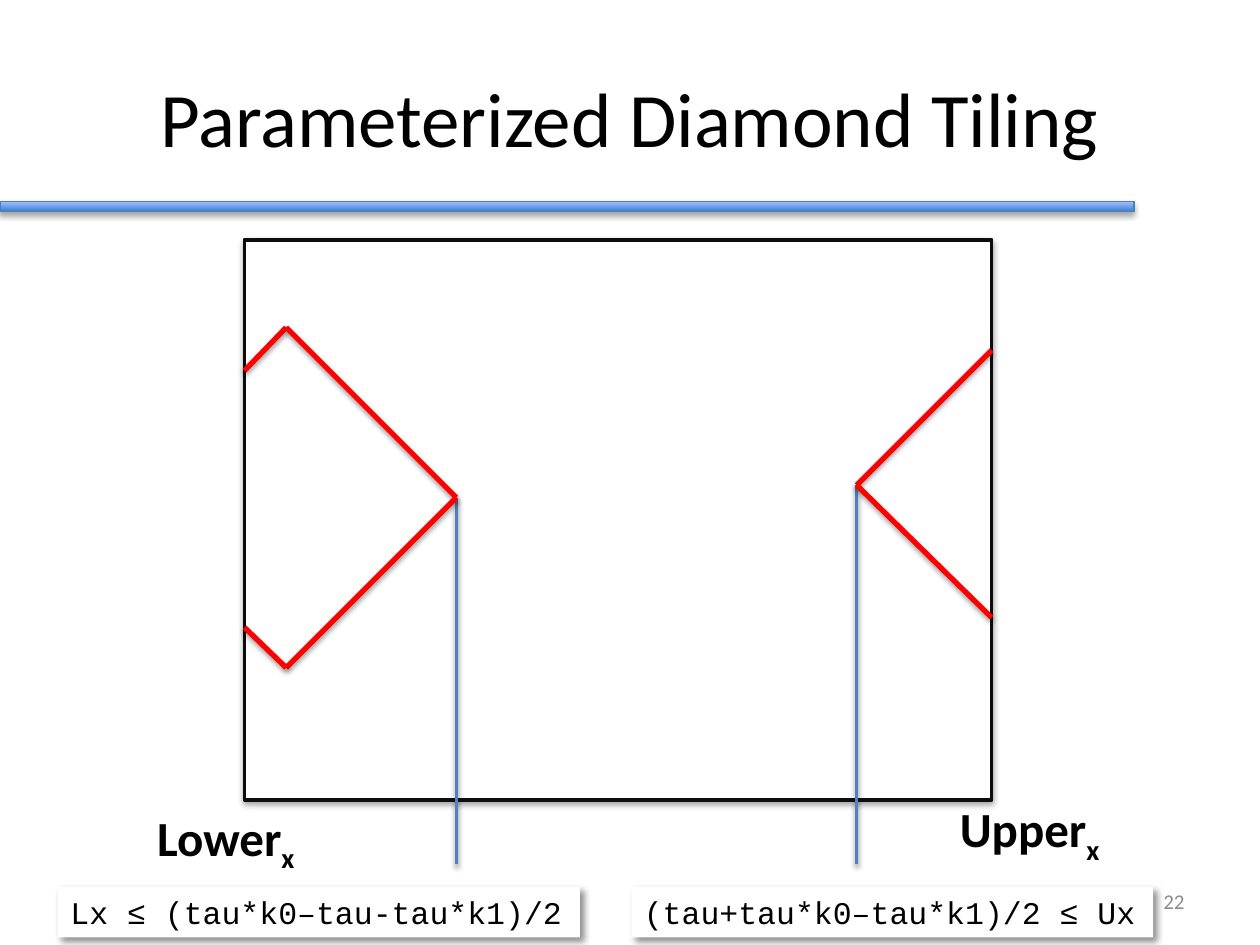
"""Build the Parameterized Diamond Tiling slide."""
from itertools import pairwise
from typing import NamedTuple

from lxml.etree import SubElement
from pptx import Presentation
from pptx.dml.color import RGBColor
from pptx.enum.shapes import MSO_CONNECTOR, MSO_SHAPE
from pptx.enum.text import MSO_ANCHOR, PP_ALIGN
from pptx.oxml.ns import qn
from pptx.util import Cm, Pt

BLACK = RGBColor(0x00, 0x00, 0x00)
WHITE = RGBColor(0xFF, 0xFF, 0xFF)
INK = RGBColor(0x0D, 0x0D, 0x0D)
GREY = RGBColor(0x8C, 0x8C, 0x8C)
RED = RGBColor(0xFF, 0x00, 0x00)
BLUE = RGBColor(0x4F, 0x81, 0xBD)
BAR_EDGE = RGBColor(0x4B, 0x7E, 0xBC)
BAR_DARK = RGBColor(0x3F, 0x80, 0xCE)
BAR_LIGHT = RGBColor(0xA4, 0xC4, 0xFF)


class Box(NamedTuple):
    left: float
    top: float
    width: float
    height: float


class Shadow(NamedTuple):
    opacity: int
    blur: float
    distance: float
    angle: int


class Path(NamedTuple):
    points: list[tuple[float, float]]
    color: RGBColor
    weight: float


class Label(NamedTuple):
    box: Box
    text: str
    size: int
    subscript: str = ""
    bold: bool = False
    font: str = "Calibri"
    color: RGBColor = BLACK
    align: PP_ALIGN = PP_ALIGN.LEFT
    anchor: MSO_ANCHOR = MSO_ANCHOR.TOP
    wrap: bool = False


BOX_SHADOW = Shadow(35, 3.1, 1.8, 90)
LINE_SHADOW = Shadow(38, 3.1, 1.6, 90)
FORMULA_SHADOW = Shadow(43, 4, 3, 45)

BAR = Box(0, 4.06, 22.86, 0.2)
FRAME = Box(4.93, 4.83, 15.06, 11.3)
FRAME_RIGHT = FRAME.left + FRAME.width
GUIDE_END = 17.42
LEFT_TIP = (9.2, 10.03)
RIGHT_TIP = (17.27, 9.78)

PATHS = [
    Path([LEFT_TIP, (LEFT_TIP[0], GUIDE_END)], BLUE, 2),
    Path([RIGHT_TIP, (RIGHT_TIP[0], GUIDE_END)], BLUE, 2),
    Path([(FRAME_RIGHT, 7.06), RIGHT_TIP, (FRAME_RIGHT, 12.45)], RED, 3),
    Path([(FRAME.left, 7.47), (5.77, 6.6), LEFT_TIP, (5.77, 13.46),
          (FRAME.left, 12.65)], RED, 3),
]
LABELS = [
    Label(Box(19.1, 15.98, 3.4, 1.45), "Upper", 28, "x", True),
    Label(Box(2.92, 16.15, 3.4, 1.45), "Lower", 28, "x", True),
    Label(Box(1.27, 0.76, 22.86, 3.18), "Parameterized Diamond Tiling", 44,
          align=PP_ALIGN.CENTER, anchor=MSO_ANCHOR.MIDDLE, wrap=True),
    Label(Box(18.21, 17.65, 5.92, 1.02), "22", 12, color=GREY,
          align=PP_ALIGN.RIGHT, anchor=MSO_ANCHOR.MIDDLE, wrap=True),
]
FORMULAS = [
    Label(Box(left, 17.88, 10.52, 1.02), text, 18, font="Courier New")
    for left, text in ((1.17, "Lx ≤ (tau*k0–tau-tau*k1)/2"),
                       (12.73, "(tau+tau*k0–tau*k1)/2 ≤ Ux"))
]


def add_shadow(sp, shadow: Shadow) -> None:
    """Give a shape or connector an outer shadow."""
    properties = sp._element.spPr
    effects = properties.find(qn("a:effectLst"))
    if effects is None:
        effects = SubElement(properties, qn("a:effectLst"))
    outer = SubElement(effects, qn("a:outerShdw"), blurRad=str(Pt(shadow.blur)),
                       dist=str(Pt(shadow.distance)),
                       dir=str(shadow.angle * 60000), rotWithShape="0")
    color = SubElement(outer, qn("a:srgbClr"), val=str(BLACK))
    SubElement(color, qn("a:alpha"), val=str(shadow.opacity * 1000))


def add_rectangle(s, box: Box, shadow: Shadow, edge: RGBColor | None = None,
                  weight: float = 0):
    """Draw a white rectangle with a shadow and an optional outline."""
    sp = s.shapes.add_shape(MSO_SHAPE.RECTANGLE, *map(Cm, box))
    sp.shadow.inherit = False
    sp.fill.solid()
    sp.fill.fore_color.rgb = WHITE
    if edge is None:
        sp.line.fill.background()
    else:
        sp.line.color.rgb = edge
        sp.line.width = Pt(weight)
    add_shadow(sp, shadow)
    return sp


def add_path(s, path: Path) -> None:
    """Join consecutive points with straight connectors."""
    for start, end in pairwise(path.points):
        sp = s.shapes.add_connector(MSO_CONNECTOR.STRAIGHT, *map(Cm, start + end))
        sp.line.color.rgb = path.color
        sp.line.width = Pt(path.weight)
        add_shadow(sp, LINE_SHADOW)


def write_label(sp, label: Label) -> None:
    """Fill a shape with the label's text and optional subscript."""
    tf = sp.text_frame
    tf.word_wrap = label.wrap
    tf.vertical_anchor = label.anchor
    p = tf.paragraphs[0]
    p.alignment = label.align
    for text in filter(None, (label.text, label.subscript)):
        r = p.add_run()
        r.text = text
        r.font.name = label.font
        r.font.size = Pt(label.size)
        r.font.bold = label.bold
        r.font.color.rgb = label.color
    if label.subscript:
        r.font._element.set("baseline", "-25000")


def main() -> None:
    """Assemble and save the slide."""
    prs = Presentation()
    prs.slide_width, prs.slide_height = Cm(25.4), Cm(19.05)
    s = prs.slides.add_slide(prs.slide_layouts[6])

    bar = add_rectangle(s, BAR, BOX_SHADOW, BAR_EDGE, 0.75)
    bar.fill.gradient()
    bar.fill.gradient_angle = 90
    for stop, color in zip(bar.fill.gradient_stops, (BAR_DARK, BAR_LIGHT)):
        stop.color.rgb = color

    add_rectangle(s, FRAME, BOX_SHADOW, INK, 2.25)
    for label in LABELS:
        write_label(s.shapes.add_textbox(*map(Cm, label.box)), label)
    for formula in FORMULAS:
        write_label(add_rectangle(s, formula.box, FORMULA_SHADOW), formula)
    for path in PATHS:
        add_path(s, path)

    prs.save("out.pptx")


if __name__ == "__main__":
    main()
